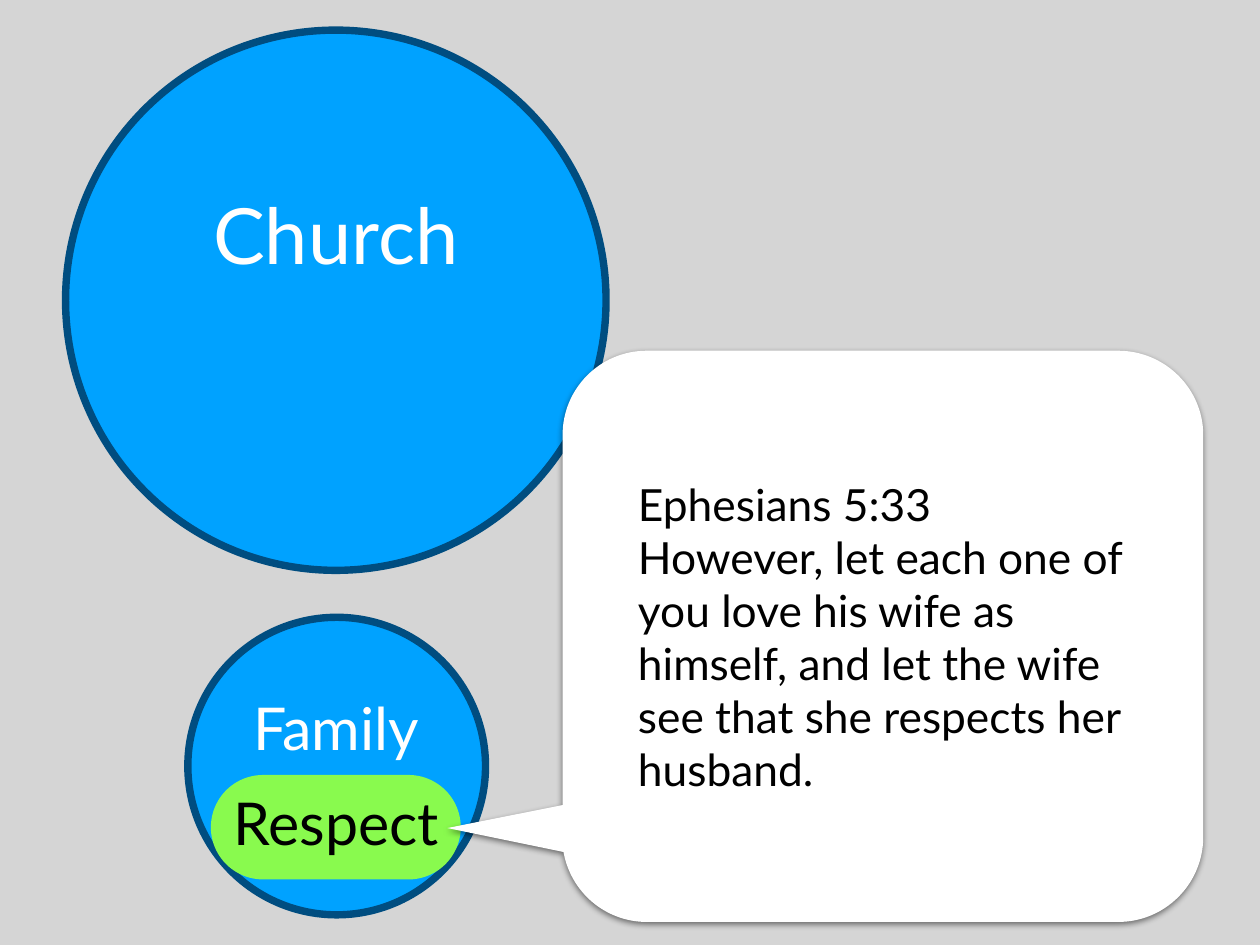
from lxml.etree import SubElement
from pptx import Presentation
from pptx.dml.color import RGBColor
from pptx.enum.shapes import MSO_SHAPE
from pptx.enum.text import MSO_ANCHOR, MSO_AUTO_SIZE, PP_ALIGN
from pptx.oxml.ns import qn
from pptx.util import Inches, Pt


def paint(shape, fill, line=None):
    shape.shadow.inherit = False
    shape.fill.solid()
    shape.fill.fore_color.rgb = RGBColor.from_string(fill)
    if line:
        shape.line.color.rgb = RGBColor.from_string(line)
        shape.line.width = Pt(6)
    else:
        shape.line.fill.background()


def add_text(shapes, text, box, size, color="000000", align=PP_ALIGN.CENTER, wrap=False):
    frame = shapes.add_textbox(*map(Inches, box)).text_frame
    frame.word_wrap = wrap
    frame.auto_size = MSO_AUTO_SIZE.NONE if wrap else MSO_AUTO_SIZE.SHAPE_TO_FIT_TEXT
    frame.vertical_anchor = MSO_ANCHOR.MIDDLE
    frame.margin_left = frame.margin_right = Inches(0.06)
    frame.margin_top = frame.margin_bottom = Inches(0.06)
    frame.text = text
    for paragraph in frame.paragraphs:
        paragraph.alignment = align
        paragraph.font.name = "Lato"
        paragraph.font.size = Pt(size)
        paragraph.font.color.rgb = RGBColor.from_string(color)


presentation = Presentation()
presentation.slide_width = Inches(14.22)
presentation.slide_height = Inches(10.67)
slide = presentation.slides.add_slide(presentation.slide_layouts[6])

backdrop = slide.shapes.add_shape(
    MSO_SHAPE.RECTANGLE, Inches(0), Inches(-0.03), Inches(14.22), Inches(10.72))
paint(backdrop, "D5D5D5")

# Church and family circles
for left, top, diameter in [(0.74, 0.34, 6.1), (2.12, 6.97, 3.36)]:
    circle = slide.shapes.add_shape(
        MSO_SHAPE.OVAL, Inches(left), Inches(top), Inches(diameter), Inches(diameter))
    paint(circle, "00A2FF", line="004D80")
add_text(slide.shapes, "Church", (2.26, 1.99, 3.06, 1.29), 63, color="FFFFFF")
add_text(slide.shapes, "Family", (2.73, 7.7, 2.13, 1.01), 48, color="FFFFFF")

# Respect label
respect = slide.shapes.add_group_shape().shapes
pill = respect.add_shape(
    MSO_SHAPE.ROUNDED_RECTANGLE, Inches(2.38), Inches(8.75), Inches(2.82), Inches(1.18))
pill.adjustments[0] = 0.5
paint(pill, "89FA4E")
add_text(respect, "Respect", (2.51, 8.78, 2.57, 1.01), 48)

# Verse callout: each corner has a start, two control points and an end
corners = [
    [(6.35, 4.91), (6.35, 4.39), (6.77, 3.96), (7.3, 3.96)],
    [(12.62, 3.96), (13.15, 3.96), (13.58, 4.39), (13.58, 4.91)],
    [(13.58, 9.45), (13.58, 9.98), (13.15, 10.41), (12.62, 10.41)],
    [(7.3, 10.41), (6.83, 10.41), (6.44, 10.07), (6.36, 9.62)],
]
outline = [(6.35, 9.09)] + [point for corner in corners for point in corner]

verse = slide.shapes.add_group_shape().shapes
builder = verse.build_freeform(Inches(5.05), Inches(9.35))
builder.add_line_segments([(Inches(x), Inches(y)) for x, y in outline], close=True)
callout = builder.convert_to_shape()
paint(callout, "FFFFFF")

# Merge the last three segments of every corner into one curve
segments = list(callout.element.iter(qn("a:lnTo")))
for first in range(2, len(segments), 4):
    curve, *rest = segments[first:first + 3]
    curve.tag = qn("a:cubicBezTo")
    for segment in rest:
        curve.append(segment[0])
        segment.getparent().remove(segment)

effects = callout.element.spPr.find(qn("a:effectLst"))
shadow = SubElement(effects, qn("a:outerShdw"), blurRad=str(Pt(5)), dist=str(Pt(2)),
                    dir="5400000", rotWithShape="0")
shadow_color = SubElement(shadow, qn("a:srgbClr"), val="000000")
SubElement(shadow_color, qn("a:alpha"), val="50000")

add_text(
    verse,
    "Ephesians 5:33\n"
    "However, let each one of you love his wife as himself, "
    "and let the wife see that she respects her husband.",
    (7.14, 4.52, 5.71, 5.33), 36, align=PP_ALIGN.LEFT, wrap=True)

presentation.save("out.pptx")
